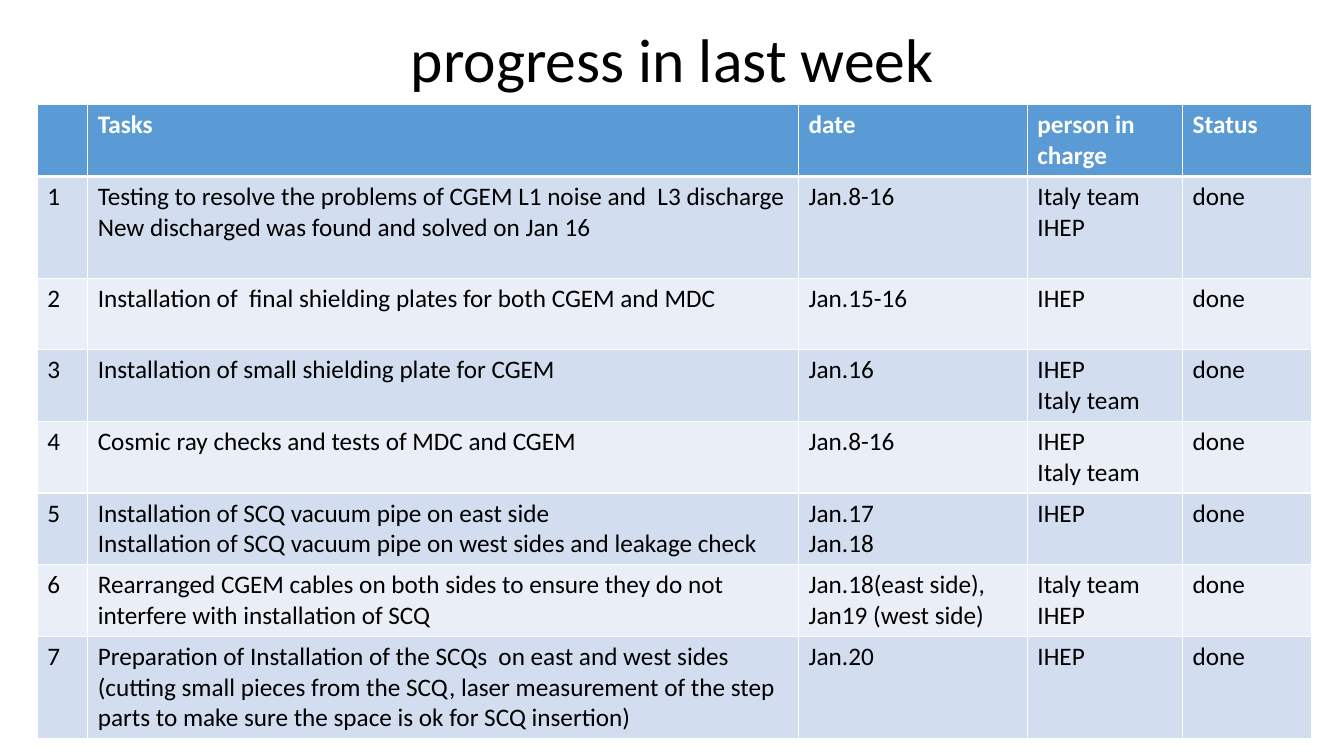
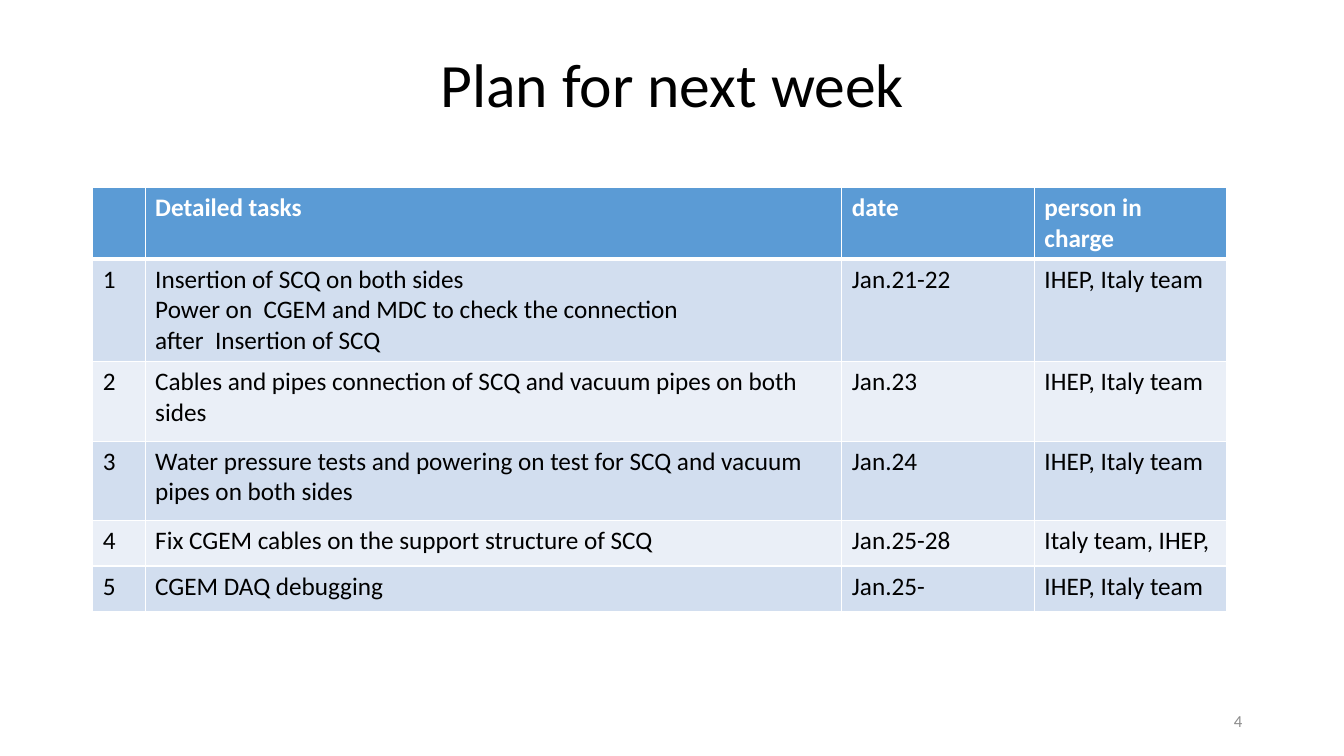
from lxml import etree
from pptx import Presentation
from pptx.dml.color import RGBColor
from pptx.enum.text import MSO_ANCHOR, MSO_AUTO_SIZE, PP_ALIGN
from pptx.oxml.ns import qn
from pptx.util import Inches, Pt

FONT = "Calibri"
COLORS = {
    "text": "000000",
    "header": "5B9BD5",
    "header_text": "FFFFFF",
    "odd_row": "D2DEEF",
    "even_row": "EAEFF7",
    "grid": "FFFFFF",
    "page_number": "8C8C8C",
}

PROGRESS_ROWS = [
    ["", "Tasks", "date", "person in charge", "Status"],
    ["1", "Testing to resolve the problems of CGEM L1 noise and  L3 discharge\n"
          "New discharged was found and solved on Jan 16",
     "Jan.8-16", "Italy team\nIHEP", "done"],
    ["2", "Installation of  final shielding plates for both CGEM and MDC",
     "Jan.15-16", "IHEP", "done"],
    ["3", "Installation of small shielding plate for CGEM",
     "Jan.16", "IHEP\nItaly team", "done"],
    ["4", "Cosmic ray checks and tests of MDC and CGEM",
     "Jan.8-16", "IHEP\nItaly team", "done"],
    ["5", "Installation of SCQ vacuum pipe on east side\n"
          "Installation of SCQ vacuum pipe on west sides and leakage check",
     "Jan.17\nJan.18", "IHEP", "done"],
    ["6", "Rearranged CGEM cables on both sides to ensure they do not "
          "interfere with installation of SCQ",
     "Jan.18(east side),\nJan19 (west side)", "Italy team\nIHEP", "done"],
    ["7", "Preparation of Installation of the SCQs  on east and west sides "
          "(cutting small pieces from the SCQ, laser measurement of the step "
          "parts to make sure the space is ok for SCQ insertion)",
     "Jan.20", "IHEP", "done"],
]

PLAN_ROWS = [
    ["", "Detailed tasks", "date", "person in charge"],
    ["1", "Insertion of SCQ on both sides\n"
          "Power on  CGEM and MDC to check the connection\n"
          "after  Insertion of SCQ",
     "Jan.21-22", "IHEP, Italy team"],
    ["2", "Cables and pipes connection of SCQ and vacuum pipes on both sides",
     "Jan.23", "IHEP, Italy team"],
    ["3", "Water pressure tests and powering on test for SCQ and vacuum "
          "pipes on both sides",
     "Jan.24", "IHEP, Italy team"],
    ["4", "Fix CGEM cables on the support structure of SCQ",
     "Jan.25-28", "Italy team, IHEP,"],
    ["5", "CGEM DAQ debugging", "Jan.25-", "IHEP, Italy team"],
]


def rgb(name):
    return RGBColor.from_string(COLORS[name])


def style_text(frame, size, color, bold=False, align=PP_ALIGN.LEFT):
    for paragraph in frame.paragraphs:
        paragraph.alignment = align
        paragraph.font.size = Pt(size)
        for run in paragraph.runs:
            run.font.name = FONT
            run.font.size = Pt(size)
            run.font.bold = bold
            run.font.color.rgb = rgb(color)


def set_borders(cell, bottom):
    properties = cell._tc.get_or_add_tcPr()
    for side, width in (("L", 1), ("R", 1), ("T", 1), ("B", bottom)):
        line = etree.SubElement(properties, qn(f"a:ln{side}"), w=str(Pt(width)))
        fill = etree.SubElement(line, qn("a:solidFill"))
        etree.SubElement(fill, qn("a:srgbClr"), val=COLORS["grid"])


def add_title(slide, text, box):
    title = slide.shapes.title
    title.left, title.top, title.width, title.height = map(Inches, box)
    frame = title.text_frame
    frame.text = text
    frame.auto_size = MSO_AUTO_SIZE.NONE
    frame.vertical_anchor = MSO_ANCHOR.MIDDLE
    frame.paragraphs[0].line_spacing = 0.9
    style_text(frame, 44, "text", align=PP_ALIGN.CENTER)


def add_task_table(slide, rows, origin, widths, heights):
    left, top = origin
    table = slide.shapes.add_table(
        len(rows), len(widths), Inches(left), Inches(top),
        Inches(sum(widths)), Inches(sum(heights))).table
    for column, width in zip(table.columns, widths):
        column.width = Inches(width)
    for index, (row, height, texts) in enumerate(zip(table.rows, heights, rows)):
        row.height = Inches(height)
        is_header = index == 0
        band = "header" if is_header else "odd_row" if index % 2 else "even_row"
        for cell, text in zip(row.cells, texts):
            cell.text_frame.text = text
            style_text(cell.text_frame, 18,
                       "header_text" if is_header else "text", bold=is_header)
            set_borders(cell, bottom=3 if is_header else 1)
            cell.fill.solid()
            cell.fill.fore_color.rgb = rgb(band)


def add_page_number(slide, number, box):
    frame = slide.shapes.add_textbox(*map(Inches, box)).text_frame
    frame.word_wrap = True
    frame.vertical_anchor = MSO_ANCHOR.MIDDLE
    frame.text = number
    style_text(frame, 12, "page_number", align=PP_ALIGN.RIGHT)


def add_task_slide(deck, title, title_box, rows, origin, widths, heights):
    slide = deck.slides.add_slide(deck.slide_layouts.get_by_name("Title Only"))
    add_title(slide, title, title_box)
    add_task_table(slide, rows, origin, widths, heights)
    return slide


def main():
    deck = Presentation()
    deck.slide_width, deck.slide_height = Inches(13.33), Inches(7.5)

    # Finished tasks
    add_task_slide(
        deck, "progress in last week", (0.92, 0.19, 11.5, 0.86),
        PROGRESS_ROWS, (0.37, 1.04),
        widths=[0.5, 7.05, 2.27, 1.54, 1.28],
        heights=[0.71, 1.01] + [0.71] * 5 + [1.01])

    # Upcoming tasks
    plan = add_task_slide(
        deck, "Plan for next week", (0.92, 0.4, 11.5, 0.93),
        PLAN_ROWS, (0.92, 1.86),
        widths=[0.52, 6.91, 1.91, 1.91],
        heights=[0.71, 1.01, 0.79, 0.79, 0.45, 0.45])
    add_page_number(plan, "4", (9.42, 6.95, 3, 0.4))

    deck.save("out.pptx")


if __name__ == "__main__":
    main()
